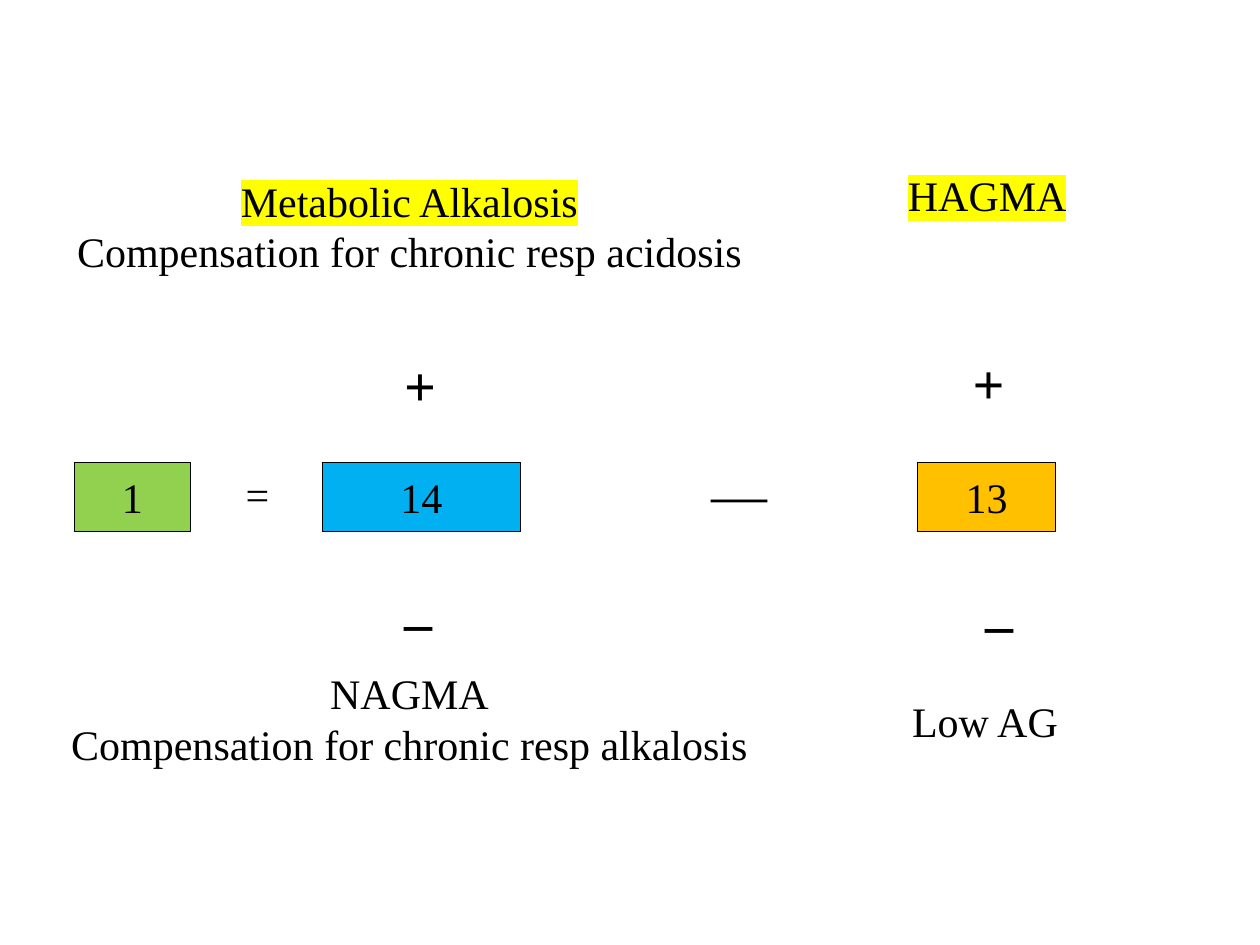
from dataclasses import dataclass

import pptx
import pptx.dml.color
import pptx.enum.shapes
import pptx.enum.text
import pptx.oxml.ns
import pptx.util
from lxml import etree

Inches, Pt = pptx.util.Inches, pptx.util.Pt
RGB = pptx.dml.color.RGBColor.from_string
ALIGN = pptx.enum.text.PP_ALIGN


@dataclass(frozen=True)
class Theme:
    font: str = "Times New Roman"
    ink: str = "000000"
    marker: str = "FFFF00"
    green: str = "92D050"
    blue: str = "00B0F0"
    amber: str = "FFC000"
    body: int = 24
    sign: int = 32
    border: float = 0.75


def write(p, text, *, theme, size, bold=False, align=ALIGN.LEFT, highlight=None):
    """Put one formatted run into a paragraph."""
    p.alignment = align
    r = p.add_run()
    r.text = text
    r.font.size = Pt(size)
    r.font.bold = bold
    r.font.color.rgb = RGB(theme.ink)
    if highlight:
        qn = pptx.oxml.ns.qn
        mark = etree.SubElement(r.font._element, qn("a:highlight"))
        etree.SubElement(mark, qn("a:srgbClr"), val=highlight)
    r.font.name = theme.font


class Board:
    """Holds the theme and the current slide."""

    def __init__(self, slide, theme):
        self.slide, self.theme = slide, theme

    def value_box(self, text, left, width, fill):
        s = self.slide.shapes.add_shape(
            pptx.enum.shapes.MSO_SHAPE.RECTANGLE,
            Inches(left), Inches(3.67), Inches(width), Inches(0.55))
        s.shadow.inherit = False
        s.fill.solid()
        s.fill.fore_color.rgb = RGB(fill)
        s.line.color.rgb = RGB(self.theme.ink)
        s.line.width = Pt(self.theme.border)
        tf = s.text_frame
        tf.vertical_anchor = pptx.enum.text.MSO_ANCHOR.MIDDLE
        write(tf.paragraphs[0], text, theme=self.theme, size=self.theme.body,
              align=ALIGN.CENTER)

    def label(self, lines, left, top, width, height=0.5, *, wrap=False,
              highlight_first=False, size=None, **style):
        sp = self.slide.shapes.add_textbox(
            Inches(left), Inches(top), Inches(width), Inches(height))
        tf = sp.text_frame
        tf.word_wrap = wrap
        tf.auto_size = pptx.enum.text.MSO_AUTO_SIZE.SHAPE_TO_FIT_TEXT
        for i, line in enumerate(lines):
            p = tf.add_paragraph() if i else tf.paragraphs[0]
            mark = self.theme.marker if highlight_first and i == 0 else None
            write(p, line, theme=self.theme, size=size or self.theme.body,
                  highlight=mark, **style)

    def cause(self, lines, left, top, width, height, highlight_first=False):
        self.label(lines, left, top, width, height, wrap=True,
                   highlight_first=highlight_first, align=ALIGN.CENTER)

    def sign(self, text, left, top, width, *, bold=True, wrap=False):
        self.label([text], left, top, width, 0.64, wrap=wrap,
                   size=self.theme.sign, bold=bold)


def main():
    prs = pptx.Presentation()
    prs.slide_width, prs.slide_height = Inches(10), Inches(7.5)
    theme = Theme()
    board = Board(prs.slides.add_slide(prs.slide_layouts[6]), theme)

    # Equation row
    board.value_box("1", 0.59, 0.92, theme.green)
    board.label(["="], 1.85, 3.67, 0.39)
    board.value_box("14", 2.56, 1.57, theme.blue)
    board.value_box("13", 7.28, 1.1, theme.amber)
    board.sign("—", 5.55, 3.59, 0.31, bold=False, wrap=True)

    # Causes above and below each term
    board.cause(["Metabolic Alkalosis", "Compensation for chronic resp acidosis"],
                0.26, 1.34, 5.98, 0.91, highlight_first=True)
    board.cause(["HAGMA"], 6.25, 1.3, 3.17, 0.5, highlight_first=True)
    board.label(["Low AG"], 7.14, 5.47, 1.37)
    board.cause(["NAGMA", "Compensation for chronic resp alkalosis"],
                0.26, 5.25, 5.98, 0.91)

    # Direction signs
    for text, left, top, width in (("+", 3.11, 2.73, 0.45), ("+", 7.62, 2.72, 0.45),
                                   ("–", 3.11, 4.61, 0.43), ("–", 7.72, 4.62, 0.43)):
        board.sign(text, left, top, width)

    prs.save("out.pptx")


if __name__ == "__main__":
    main()
